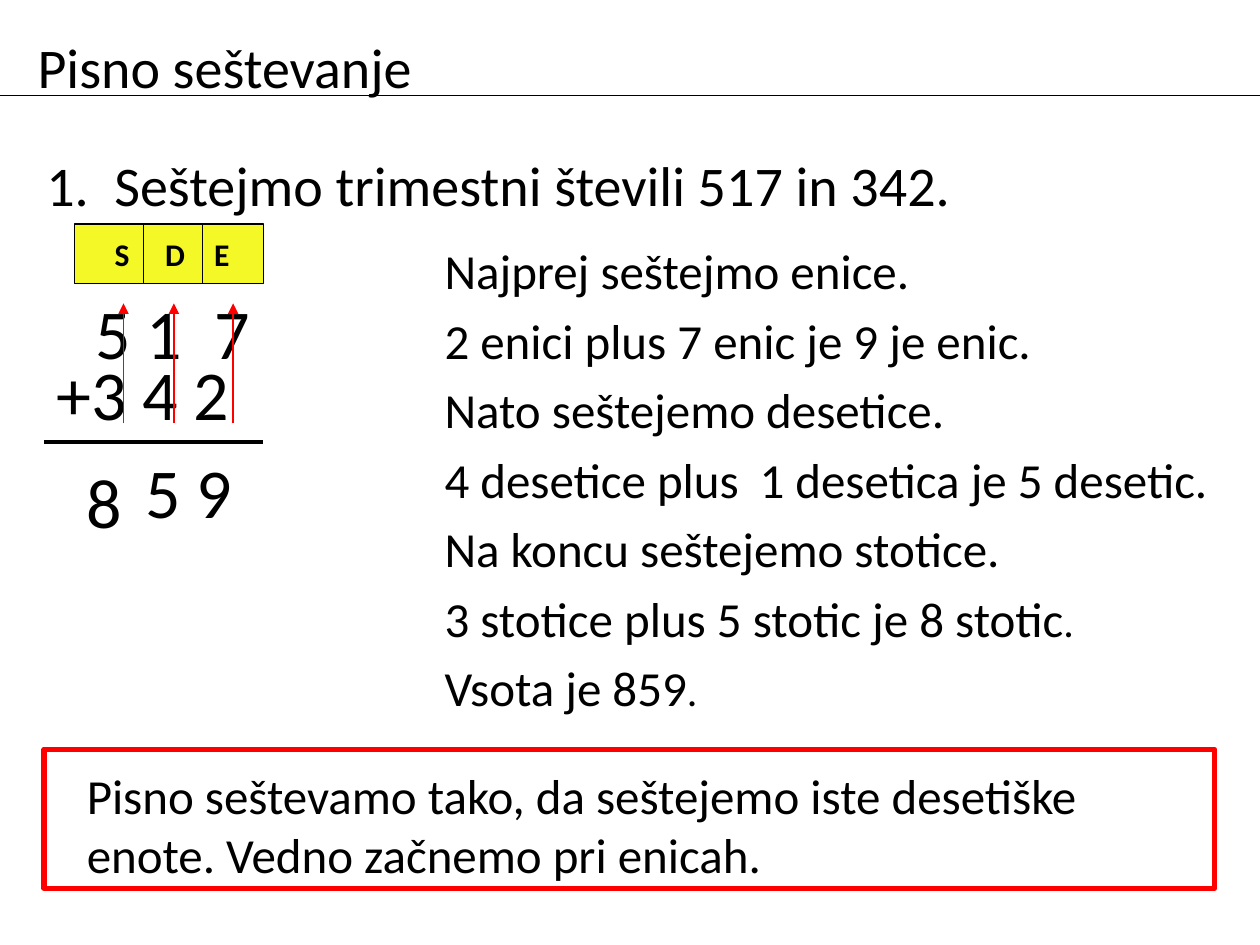
from lxml.etree import SubElement
from pptx import Presentation
from pptx.dml.color import RGBColor
from pptx.enum.shapes import MSO_CONNECTOR, MSO_SHAPE
from pptx.enum.text import MSO_ANCHOR, PP_ALIGN
from pptx.oxml.ns import qn
from pptx.util import Inches, Pt

STRAIGHT = MSO_CONNECTOR.STRAIGHT
RECTANGLE = MSO_SHAPE.RECTANGLE
MIDDLE, TOP = MSO_ANCHOR.MIDDLE, MSO_ANCHOR.TOP
LEFT = PP_ALIGN.LEFT

FONT = "Calibri"
COLORS = {"ink": "000000", "accent": "FF0000", "header": "F3F826"}
WIDTH, HEIGHT = Inches(10), Inches(7.5)
INSET = 0.1

# Places are left, top, width, height in percent of the slide.
TEXTS = [
    {"place": (2, 2.8, 70, 10.5), "runs": [("Pisno seštevanje", 32)]},
    {"place": (2.7, 15.3, 95.3, 7.3), "tabs": [0.54],
     "runs": [("1.\tSeštejmo trimestni števili 517 in 342.", 32)]},
    {"place": (4.3, 30, 22, 9.5), "tabs": [0.94], "inset": 0.33,
     "runs": [("5 1\t7", 40)]},
    {"place": (3.5, 36.4, 18.9, 7.3), "runs": [("+3 4 2", 40)]},
    {"place": (5.9, 47.9, 7.1, 9.5), "runs": [("8", 40)]},
    {"place": (10.6, 46.8, 6.3, 10.5), "runs": [("5", 40)]},
    {"place": (14.6, 46.8, 6.3, 10.5), "runs": [("9", 40)]},
    {"place": (5.9, 80.4, 89.8, 13.7),
     "runs": [("Pisno seštevamo tako, da seštejemo iste desetiške enote. "
               "Vedno začnemo pri enicah.", 28)]},
]
STEPS = [
    (49.6, [("Najprej seštejmo enice.", 28)]),
    (63, [("2 enici plus 7 enic je 9 je enic.", 28)]),
    (49.6, [("Nato seštejemo desetice.", 28)]),
    (65.7, [("4 desetice plus\t1 desetica je 5 desetic.", 28)]),
    (49.6, [("Na koncu seštejemo stotice.", 28)]),
    (63, [("3 stotice plus 5 stotic je 8 stotic", 28), (".", 24)]),
    (49.6, [("Vsota je 859", 28), (".", 24)]),
]
STEP_LEFT, STEP_TOP, STEP_HEIGHT, STEP_TAB = 34.3, 24.8, 7.36, 2.5
HEADER = (5.9, 23.7, 15, 6.3)
FRAME = (3.5, 79.3, 92.9, 14.7)
DIVIDERS = [11.4, 16.1]
ARROWS = [9.8, 13.8, 18.5]
ARROW_START, ARROW_END = 44.8, 32.1


def across(share):
    return int(WIDTH * share / 100)


def down(share):
    return int(HEIGHT * share / 100)


def area(place):
    left, top, width, height = place
    return across(left), down(top), across(width), down(height)


def color(name):
    return RGBColor.from_string(COLORS[name])


def write(shape, runs, tabs=(), inset=INSET, anchor=TOP, bold=False):
    frame = shape.text_frame
    frame.word_wrap = True
    frame.vertical_anchor = anchor
    frame.margin_left = Inches(inset)
    para = frame.paragraphs[0]
    para.alignment = LEFT
    if tabs:
        stops = SubElement(para._p.get_or_add_pPr(), qn("a:tabLst"))
        for stop in tabs:
            SubElement(stops, qn("a:tab"), pos=str(Inches(stop)), algn="l")
    for text, size in runs:
        span = para.add_run()
        span.text = text
        span.font.name = FONT
        span.font.size = Pt(size)
        span.font.bold = bold
        span.font.color.rgb = color("ink")


def add_text(slide, place, runs, **options):
    write(slide.shapes.add_textbox(*area(place)), runs, **options)


def add_line(slide, start, end, ink="ink", weight=0.75, arrow=False):
    line = slide.shapes.add_connector(
        STRAIGHT, across(start[0]), down(start[1]), across(end[0]), down(end[1]))
    line.line.color.rgb = color(ink)
    line.line.width = Pt(weight)
    if arrow:
        SubElement(line.line._get_or_add_ln(), qn("a:tailEnd"), type="triangle")
    SubElement(line._element.spPr, qn("a:effectLst"))


def add_box(slide, place, ink, weight, fill=None):
    box = slide.shapes.add_shape(RECTANGLE, *area(place))
    box.shadow.inherit = False
    box.line.color.rgb = color(ink)
    box.line.width = Pt(weight)
    if fill:
        box.fill.solid()
        box.fill.fore_color.rgb = color(fill)
    else:
        box.fill.background()
    return box


def main():
    deck = Presentation()
    deck.slide_width, deck.slide_height = WIDTH, HEIGHT
    slide = deck.slides.add_slide(deck.slide_layouts[6])

    for text in TEXTS:
        add_text(slide, **text)
    for row, (width, runs) in enumerate(STEPS):
        place = (STEP_LEFT, STEP_TOP + row * STEP_HEIGHT, width, STEP_HEIGHT)
        tabs = [STEP_TAB] if "\t" in runs[0][0] else []
        add_text(slide, place, runs, tabs=tabs)

    add_line(slide, (0, 10.1), (100, 10.1))
    add_line(slide, (3.5, 46.8), (20.9, 46.8), weight=2.25)
    for left in ARROWS:
        add_line(slide, (left, ARROW_START), (left, ARROW_END), "accent", arrow=True)

    add_box(slide, FRAME, "accent", 3)
    header = add_box(slide, HEADER, "ink", 0.75, "header")
    write(header, [("S\tD\tE", 18)], tabs=[0.4, 0.79], inset=0.32,
          anchor=MIDDLE, bold=True)
    for left in DIVIDERS:
        add_line(slide, (left, HEADER[1]), (left, HEADER[1] + HEADER[3]))

    deck.save("out.pptx")


if __name__ == "__main__":
    main()
